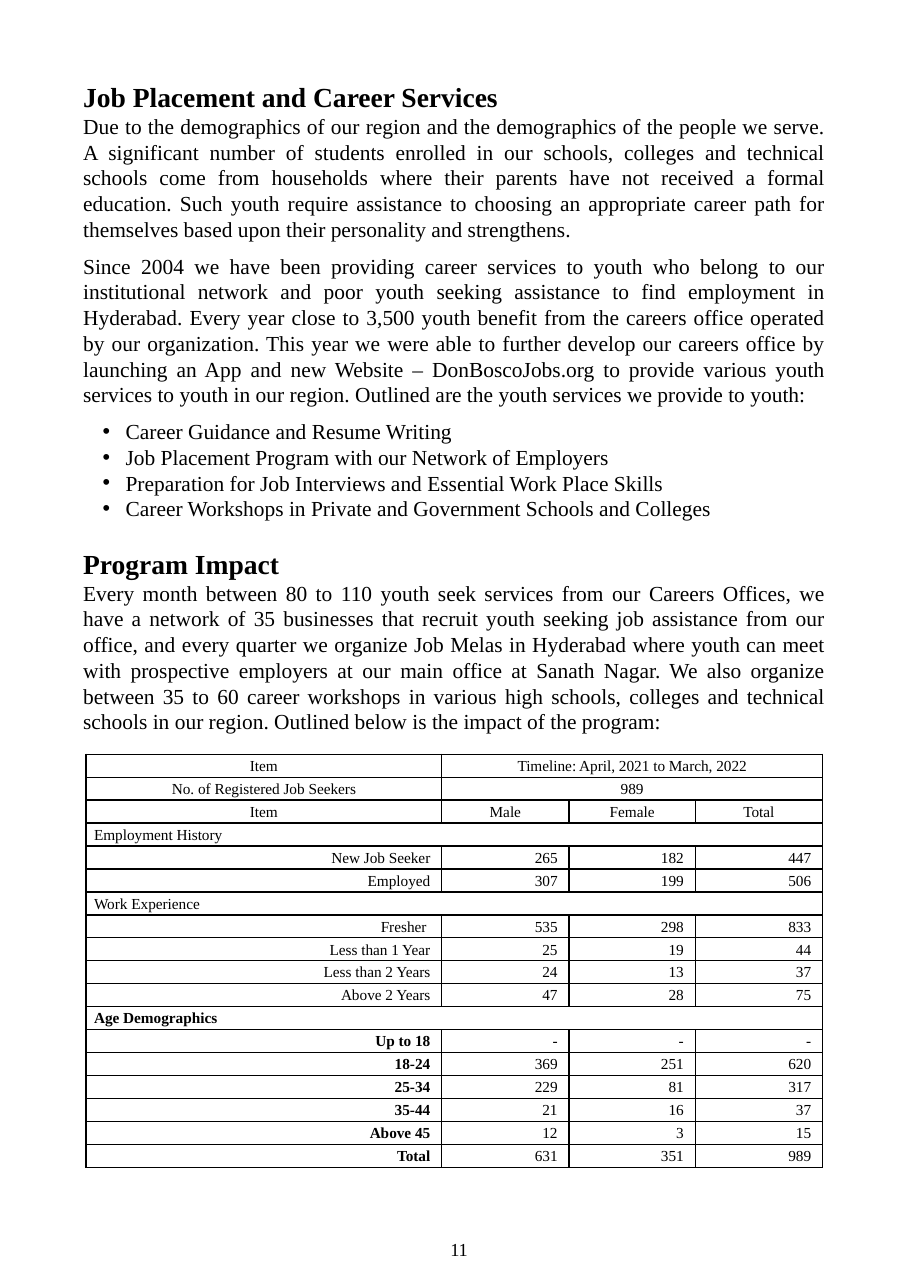
from dataclasses import dataclass

from lxml import etree
from pptx import Presentation, util as u
from pptx.dml.color import RGBColor
from pptx.enum import text
from pptx.oxml.ns import qn

PX = 9525  # EMU in one px, 96 px to the inch
Align = text.PP_ALIGN


@dataclass(frozen=True)
class Theme:
    font: str = "Times New Roman"
    ink: str = "000000"
    paper: str = "FFFFFF"
    heading: int = 18
    body: int = 14
    page_number: int = 12
    table: int = 10
    leading: float = 1.2
    table_leading: float = 1.07
    border: int = 12700


@dataclass(frozen=True)
class Para:
    text: str
    heading: bool = False
    bullet: bool = False
    before: float = 0


@dataclass(frozen=True)
class Row:
    """A table row; the last cell spans the columns that are left."""
    cells: tuple[str, ...]
    label_align: Align = Align.RIGHT
    value_align: Align = Align.RIGHT
    bold_label: bool = False


THEME = Theme()
GAP, SECTION_GAP = 7.2, 16.8
COLUMNS = (310, 111, 110, 111)
ROW_HEIGHT = 20
TABLE_LEFT, TABLE_TOP = 75, 657

SERVICES = (
    "Career Guidance and Resume Writing",
    "Job Placement Program with our Network of Employers",
    "Preparation for Job Interviews and Essential Work Place Skills",
    "Career Workshops in Private and Government Schools and Colleges",
)
ARTICLE = (
    Para("Job Placement and Career Services", heading=True),
    Para("Due to the demographics of our region and the demographics of the people we serve. "
         "A significant number of students enrolled in our schools, colleges and technical schools "
         "come from households where their parents have not received a formal education. Such youth "
         "require assistance to choosing an appropriate career path for themselves based upon their "
         "personality and strengthens."),
    Para("Since 2004 we have been providing career services to youth who belong to our institutional "
         "network and poor youth seeking assistance to find employment in Hyderabad. Every year close "
         "to 3,500 youth benefit from the careers office operated by our organization. This year we "
         "were able to further develop our careers office by launching an App and new Website – "
         "DonBoscoJobs.org to provide various youth services to youth in our region. Outlined are the "
         "youth services we provide to youth:", before=GAP),
    *(Para(service, bullet=True, before=0 if i else GAP) for i, service in enumerate(SERVICES)),
    Para("Program Impact", heading=True, before=SECTION_GAP),
    Para("Every month between 80 to 110 youth seek services from our Careers Offices, we have a "
         "network of 35 businesses that recruit youth seeking job assistance from our office, and "
         "every quarter we organize Job Melas in Hyderabad where youth can meet with prospective "
         "employers at our main office at Sanath Nagar. We also organize between 35 to 60 career "
         "workshops in various high schools, colleges and technical schools in our region. Outlined "
         "below is the impact of the program:"),
)


def header(*cells: str) -> Row:
    return Row(cells, Align.CENTER, Align.CENTER)


def section(title: str, bold: bool = False) -> Row:
    return Row((title,), Align.LEFT, bold_label=bold)


def age(*cells: str) -> Row:
    return Row(cells, bold_label=True)


JOB_SEEKERS = (
    header("Item", "Timeline: April, 2021 to March, 2022"),
    header("No. of Registered Job Seekers", "989"),
    header("Item", "Male", "Female", "Total"),
    section("Employment History"),
    Row(("New Job Seeker", "265", "182", "447")),
    Row(("Employed", "307", "199", "506")),
    section("Work Experience"),
    Row(("Fresher ", "535", "298", "833")),
    Row(("Less than 1 Year", "25", "19", "44")),
    Row(("Less than 2 Years", "24", "13", "37")),
    Row(("Above 2 Years", "47", "28", "75")),
)
AGES = (
    section("Age Demographics", bold=True),
    age("Up to 18", "-", "-", "-"),
    age("18-24", "369", "251", "620"),
    age("25-34", "229", "81", "317"),
    age("35-44", "21", "16", "37"),
    age("Above 45", "12", "3", "15"),
    age("Total", "631", "351", "989"),
)


def px(*lengths: int) -> list[u.Emu]:
    return [u.Emu(length * PX) for length in lengths]


def add_run(p, words: str, size: int, bold: bool = False) -> None:
    r = p.add_run()
    r.text = words
    r.font.name = THEME.font
    r.font.size = u.Pt(size)
    r.font.bold = bold
    r.font.color.rgb = RGBColor.from_string(THEME.ink)


def add_bullet(p) -> None:
    pPr = p._p.get_or_add_pPr()
    pPr.set("marL", str(37 * PX))
    pPr.set("indent", str(-20 * PX))
    etree.SubElement(pPr, qn("a:buFont"), typeface="Arial")
    etree.SubElement(pPr, qn("a:buChar"), char="•")


def add_article(s, paras: tuple[Para, ...]) -> None:
    tf = s.shapes.add_textbox(*px(63, 65, 666, 585)).text_frame
    tf.word_wrap = True
    for i, para in enumerate(paras):
        p = tf.add_paragraph() if i else tf.paragraphs[0]
        size = THEME.heading if para.heading else THEME.body
        p.alignment = Align.JUSTIFY
        p.line_spacing = u.Pt(size * THEME.leading)
        if para.before:
            p.space_before = u.Pt(para.before)
        if para.bullet:
            add_bullet(p)
        add_run(p, para.text, size, para.heading)


def style_cell(cell) -> None:
    """Give the cell its borders, fill and insets."""
    tcPr = cell._tc.get_or_add_tcPr()
    for side in ("lnL", "lnR", "lnT", "lnB"):
        ln = etree.SubElement(tcPr, qn(f"a:{side}"), w=str(THEME.border))
        etree.SubElement(etree.SubElement(ln, qn("a:solidFill")), qn("a:srgbClr"), val=THEME.ink)
    cell.fill.solid()
    cell.fill.fore_color.rgb = RGBColor.from_string(THEME.paper)
    cell.vertical_anchor = text.MSO_ANCHOR.MIDDLE
    cell.margin_left, cell.margin_right, cell.margin_top, cell.margin_bottom = px(7, 7, 0, 0)


def add_table(s, top: int, rows: tuple[Row, ...]) -> None:
    box = px(TABLE_LEFT, top, sum(COLUMNS), ROW_HEIGHT * len(rows))
    table = s.shapes.add_table(len(rows), len(COLUMNS), *box).table
    table.first_row = table.horz_banding = False
    for column, width in zip(table.columns, px(*COLUMNS)):
        column.width = width
    for i, row in enumerate(rows):
        table.rows[i].height = px(ROW_HEIGHT)[0]
        for j in range(len(COLUMNS)):
            style_cell(table.cell(i, j))
        last = len(row.cells) - 1
        if last < len(COLUMNS) - 1:
            table.cell(i, last).merge(table.cell(i, len(COLUMNS) - 1))
        for j, words in enumerate(row.cells):
            cell = table.cell(i, j)
            p = cell.text_frame.paragraphs[0]
            p.alignment = row.value_align if j else row.label_align
            p.line_spacing = THEME.table_leading
            if p.alignment == Align.RIGHT:
                cell.margin_right = px(10)[0]
            add_run(p, words, THEME.table, row.bold_label and j == 0)


def main() -> None:
    prs = Presentation()
    prs.slide_width, prs.slide_height = px(794, 1122)
    s = prs.slides.add_slide(prs.slide_layouts[6])
    add_article(s, ARTICLE)
    add_table(s, TABLE_TOP, JOB_SEEKERS)
    add_table(s, TABLE_TOP + ROW_HEIGHT * len(JOB_SEEKERS), AGES)
    tf = s.shapes.add_textbox(*px(383, 1074, 35, 29)).text_frame
    tf.word_wrap = False
    add_run(tf.paragraphs[0], "11", THEME.page_number)
    prs.save("out.pptx")


if __name__ == "__main__":
    main()
